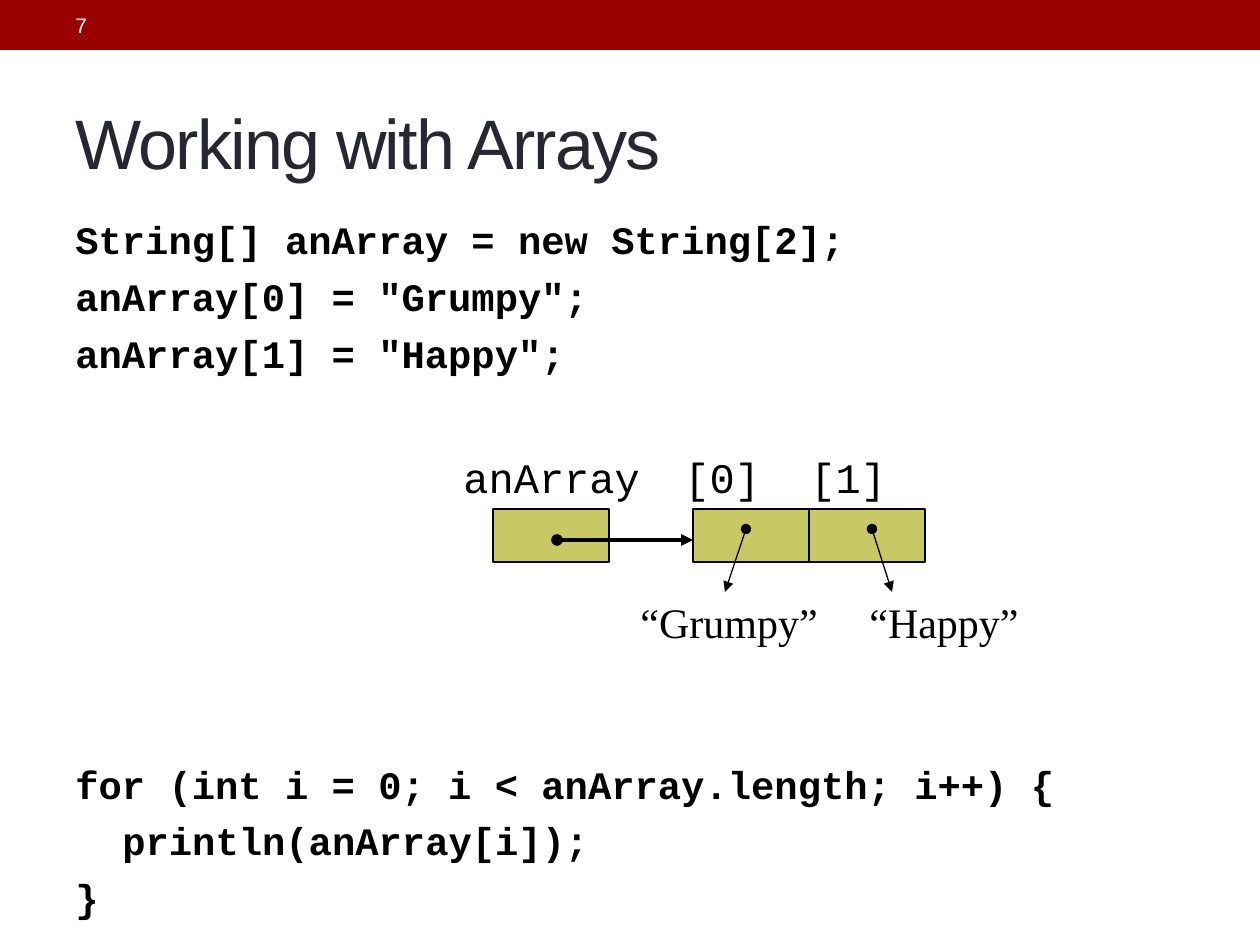
import pptx
import pptx.util
import pptx.dml.color
import pptx.enum.shapes
import pptx.enum.text
import pptx.oxml.ns
from lxml import etree

PX_PER_INCH = 126
SANS, MONO, SERIF = "Arial", "Courier New", "Times New Roman"
BLACK, WHITE, RED, OLIVE, INK = "000000", "FFFFFF", "990000", "C8C864", "252731"
qn = pptx.oxml.ns.qn


def px(n):
    return pptx.util.Emu(round(n * 914400 / PX_PER_INCH))


def rgb(color):
    return pptx.dml.color.RGBColor.from_string(color)


class Painter:
    """Holds the current slide and draws each kind of element on it."""

    def __init__(self, slide):
        self.s = slide

    def box(self, x, y, w, h, fill, line=None):
        sp = self.s.shapes.add_shape(
            pptx.enum.shapes.MSO_SHAPE.RECTANGLE, px(x), px(y), px(w), px(h))
        sp.shadow.inherit = False
        sp.fill.solid()
        sp.fill.fore_color.rgb = rgb(fill)
        if line:
            sp.line.color.rgb = rgb(line)
            sp.line.width = pptx.util.Pt(0.75)
        else:
            sp.line.fill.background()
        return sp

    def text(self, x, y, w, h, lines, font, size, color=BLACK, bold=False,
             before=0, middle=False):
        anchors = pptx.enum.text.MSO_ANCHOR
        tf = self.s.shapes.add_textbox(px(x), px(y), px(w), px(h)).text_frame
        tf.word_wrap = True
        tf.vertical_anchor = anchors.MIDDLE if middle else anchors.TOP
        tf.text = "\n".join(lines)
        for p in tf.paragraphs:
            p.space_before = pptx.util.Pt(before)
            p.font.name = font
            p.font.size = pptx.util.Pt(size)
            p.font.bold = bold
            p.font.color.rgb = rgb(color)
        return tf

    def code(self, y, lines):
        return self.text(63, y, 1144, 54 * len(lines) + 13, lines, MONO, 22.2,
                         bold=True, before=5.9)

    def pointer(self, x1, y1, x2, y2, width=0.75):
        c = self.s.shapes.add_connector(
            pptx.enum.shapes.MSO_CONNECTOR.STRAIGHT, px(x1), px(y1), px(x2), px(y2))
        c.line.color.rgb = rgb(BLACK)
        c.line.width = pptx.util.Pt(width)
        ln = c.line._get_or_add_ln()
        etree.SubElement(ln, qn("a:headEnd"), type="oval")
        etree.SubElement(ln, qn("a:tailEnd"), type="triangle")
        etree.SubElement(c._element.spPr, qn("a:effectLst"))
        return c


def main():
    prs = pptx.Presentation()
    prs.slide_width, prs.slide_height = px(1260), px(945)
    art = Painter(prs.slides.add_slide(prs.slide_layouts[6]))

    # Top band with the slide number
    art.box(0, 0, 1260, 50, RED)
    art.text(63, 3, 400, 45, ["7"], SANS, 12, WHITE, middle=True)

    # Title, slightly tightened
    title = art.text(63, 73, 1134, 136, ["Working with Arrays"], SANS, 40, INK,
                     middle=True)
    title.paragraphs[0].runs[0].font._element.set("spc", "-100")

    # Code above and below the diagram
    art.code(210, ["String[] anArray = new String[2];",
                   'anArray[0] = "Grumpy";',
                   'anArray[1] = "Happy";'])
    loop = art.code(754, ["for (int i = 0; i < anArray.length; i++) {",
                          "println(anArray[i]);",
                          "}"])
    loop.paragraphs[1]._p.get_or_add_pPr().set("marL", str(px(47)))

    # Array variable and its two cells
    cell_w = 116
    for x in (493, 693, 693 + cell_w):
        art.box(x, 509, cell_w, 53, OLIVE, BLACK)

    # Labels above and values below
    for x, w, label in ((451, 242, "anArray"), (672, 110, "[0]"), (798, 110, "[1]")):
        art.text(x, 445, w, 63, [label], MONO, 24)
    for x, value in ((628, "“Grumpy”"), (857, "“Happy”")):
        art.text(x, 590, 220, 64, [value], SERIF, 24)

    # References
    art.pointer(557, 540, 693, 540, 2.25)
    for x1, x2 in ((746, 725), (872, 892)):
        art.pointer(x1, 529, x2, 592)

    prs.save("out.pptx")


if __name__ == "__main__":
    main()
